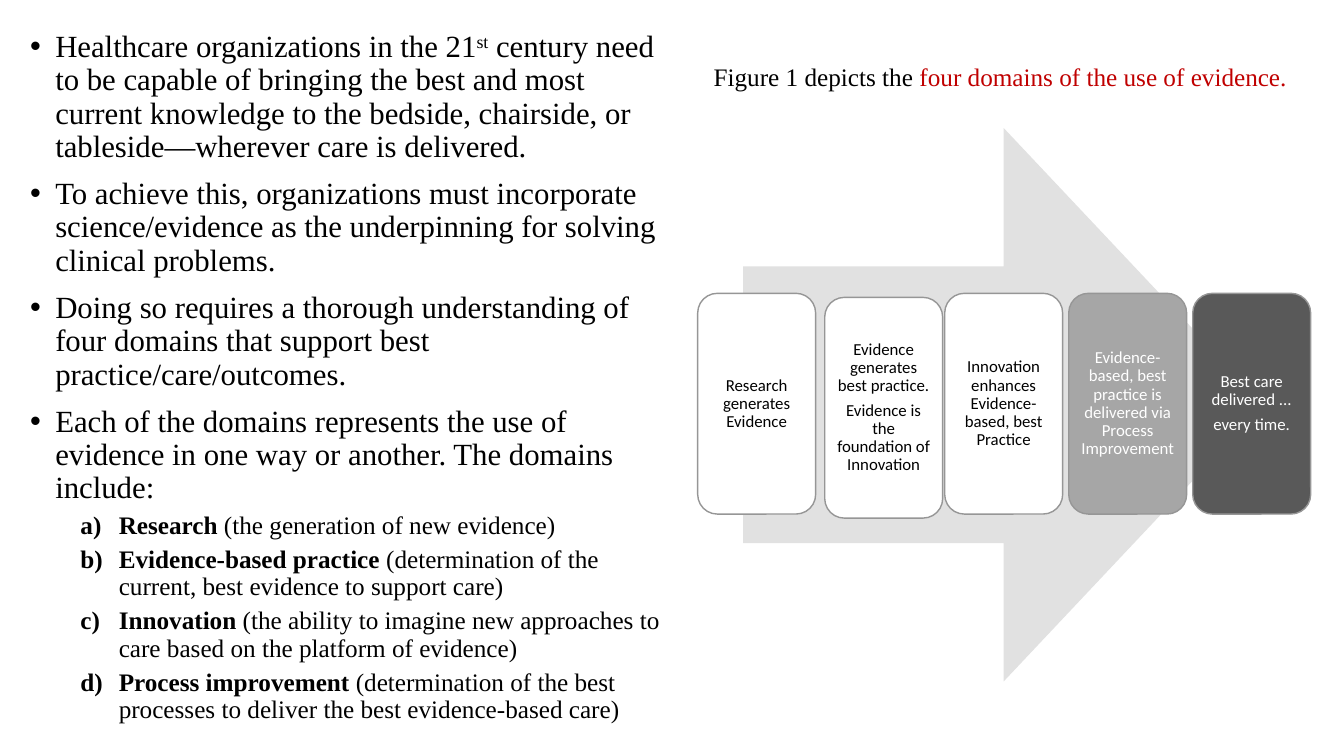
import pptx
import pptx.util
import pptx.dml.color
import pptx.enum.shapes
import pptx.enum.text
import pptx.oxml
import pptx.oxml.ns

Inches, Pt = pptx.util.Inches, pptx.util.Pt
KIND = pptx.enum.shapes.MSO_SHAPE
ALIGN = pptx.enum.text.PP_ALIGN
ANCHOR = pptx.enum.text.MSO_ANCHOR
FIT = pptx.enum.text.MSO_AUTO_SIZE

COLORS = {
    "black": "000000", "white": "FFFFFF", "red": "C00000",
    "arrow": "E1E1E1", "edge": "969696", "mid": "A6A6A6", "dark": "595959",
}


class Page:
    serif, sans = "Times New Roman", "Calibri"

    def __init__(self, slide):
        self.slide = slide

    def color(self, name):
        return pptx.dml.color.RGBColor.from_string(COLORS[name])

    def run(self, para, text, size, font, color="black", bold=False, lift=0):
        run = para.add_run()
        run.text = text
        run.font.size, run.font.name, run.font.bold = Pt(size), font, bold
        run.font.color.rgb = self.color(color)
        if lift:
            run.font._element.set("baseline", str(lift * 1000))

    def paras(self, frame, count):
        return [frame.paragraphs[0]] + [frame.add_paragraph() for _ in range(count - 1)]

    def text(self, x, y, w, h, wrap=True):
        frame = self.slide.shapes.add_textbox(
            Inches(x), Inches(y), Inches(w), Inches(h)).text_frame
        frame.word_wrap = wrap
        return frame

    def bullet(self, para, left, hang, gap, mark):
        para.line_spacing, para.space_before = 0.9, Pt(gap)
        props = para._p.get_or_add_pPr()
        props.set("marL", str(Inches(left)))
        props.set("indent", str(-Inches(hang)))
        space = pptx.oxml.ns.nsdecls("a")
        if mark == "•":
            props.append(pptx.oxml.parse_xml(f'<a:buFont {space} typeface="Arial"/>'))
            props.append(pptx.oxml.parse_xml(f'<a:buChar {space} char="•"/>'))
        else:
            props.append(pptx.oxml.parse_xml(f'<a:buAutoNum {space} type="{mark}"/>'))

    def shape(self, kind, x, y, w, h, fill, line=None):
        shape = self.slide.shapes.add_shape(
            kind, Inches(x), Inches(y), Inches(w), Inches(h))
        shape.shadow.inherit = False
        shape.fill.solid()
        shape.fill.fore_color.rgb = self.color(fill)
        if line:
            shape.line.color.rgb = self.color(line)
            shape.line.width = Pt(1)
        else:
            shape.line.fill.background()
        return shape

    def card(self, x, y, fill, ink, lines):
        frame = self.shape(KIND.ROUNDED_RECTANGLE, x, y, 1.17, 2.19, fill, "edge").text_frame
        frame.word_wrap = True
        frame.vertical_anchor = ANCHOR.MIDDLE
        frame.margin_left = frame.margin_right = Inches(0.05)
        frame.margin_top = frame.margin_bottom = Inches(0.05)
        for para, line in zip(self.paras(frame, len(lines)), lines):
            para.alignment = ALIGN.CENTER
            para.line_spacing, para.space_after = 0.9, Pt(4.5)
            self.run(para, line, 12, self.sans, ink)


# Each point is a list of (text, superscript percent)
POINTS = [
    [("Healthcare organizations in the 21", 0), ("st", 30),
     (" century need to be capable of bringing the best and most current knowledge "
      "to the bedside, chairside, or tableside—wherever care is delivered.", 0)],
    [("To achieve this, organizations must incorporate science/evidence as the "
      "underpinning for solving clinical problems.", 0)],
    [("Doing so requires a thorough understanding of four domains that support best "
      "practice/care/outcomes.", 0)],
    [("Each of the domains represents the use of evidence in one way or another. "
      "The domains include:", 0)],
]
DOMAINS = [
    ("Research", " (the generation of new evidence)"),
    ("Evidence-based practice ",
     "(determination of the current, best evidence to support care)"),
    ("Innovation",
     " (the ability to imagine new approaches to care based on the platform of evidence)"),
    ("Process improvement ",
     "(determination of the best processes to deliver the best evidence-based care)"),
]
# Left, top, fill, text colour, lines
CARDS = [
    (6.92, 2.91, "white", "black", ["Research generates Evidence"]),
    (8.18, 2.95, "white", "black", ["Evidence generates best practice.",
                                    "Evidence is the foundation of Innovation"]),
    (9.37, 2.91, "white", "black", ["Innovation enhances Evidence-based, best Practice"]),
    (10.6, 2.91, "mid", "white",
     ["Evidence-based, best practice is delivered via Process Improvement"]),
    (11.83, 2.91, "dark", "white", ["Best care delivered ...", "every time."]),
]


def main():
    deck = pptx.Presentation()
    deck.slide_width, deck.slide_height = Inches(13.33), Inches(7.5)
    page = Page(deck.slides.add_slide(deck.slide_layouts[6]))

    # Bullets and lettered domains
    body = page.text(0.2, 0.26, 6.56, 8.04)
    paras = page.paras(body, len(POINTS) + len(DOMAINS))
    for para, point in zip(paras, POINTS):
        page.bullet(para, 0.25, 0.25, 10, "•")
        for text, lift in point:
            page.run(para, text, 22, page.serif, lift=lift)
    for para, (name, note) in zip(paras[len(POINTS):], DOMAINS):
        para.level = 1
        page.bullet(para, 0.88, 0.38, 5, "alphaLcParenR")
        page.run(para, name, 18, page.serif, bold=True)
        page.run(para, note, 18, page.serif)

    # Arrow with the five steps
    page.shape(KIND.RIGHT_ARROW, 7.37, 1.27, 5.17, 5.49, "arrow")
    for card in CARDS:
        page.card(*card)

    # Figure caption
    frame = page.text(6.98, 0.56, 5.94, 0.4, wrap=False)
    frame.auto_size = FIT.SHAPE_TO_FIT_TEXT
    para = frame.paragraphs[0]
    page.run(para, "Figure 1 depicts the ", 18, page.serif)
    page.run(para, "four domains of the use of evidence.", 18, page.serif, "red")

    deck.save("out.pptx")


if __name__ == "__main__":
    main()
